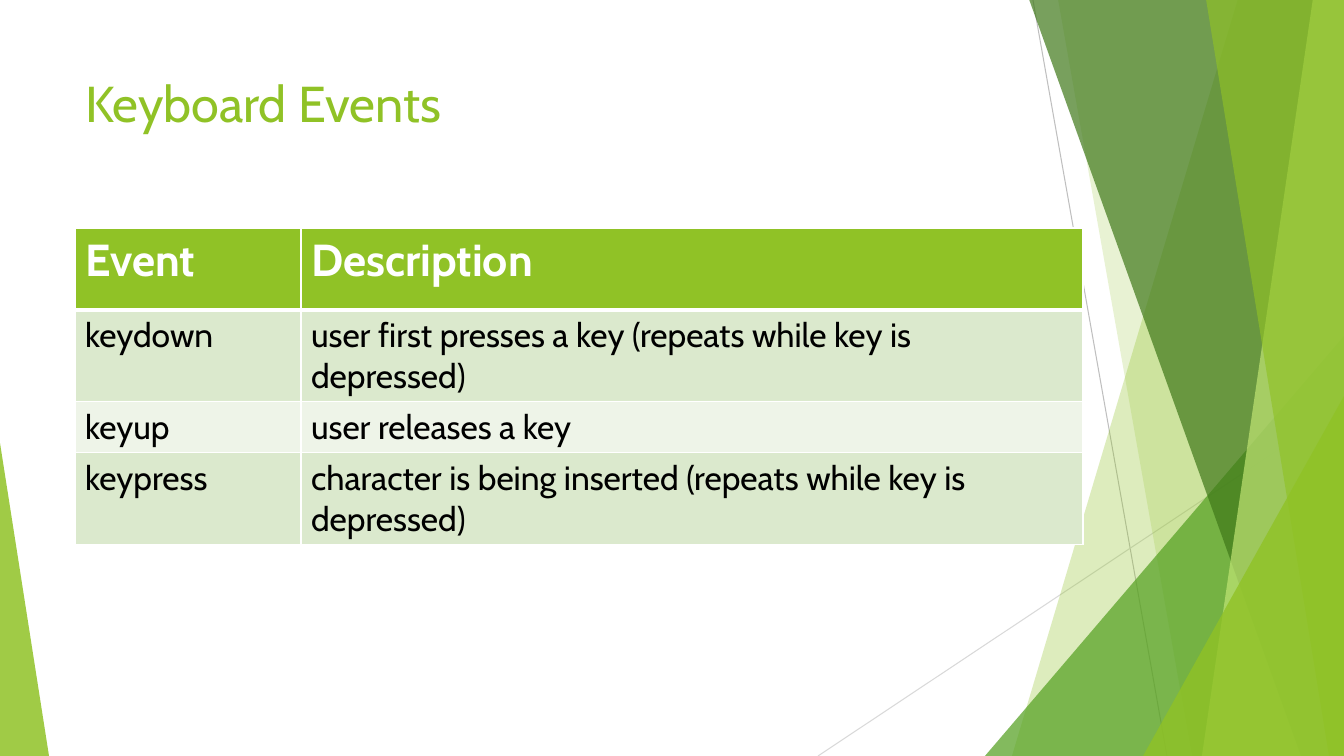
from lxml.etree import SubElement
from pptx import Presentation
from pptx.dml.color import RGBColor
from pptx.enum.shapes import MSO_CONNECTOR, MSO_SHAPE
from pptx.enum.text import MSO_ANCHOR, PP_ALIGN
from pptx.oxml.ns import qn
from pptx.util import Emu, Pt

WIDTH, HEIGHT = 1344, 756
SCALE = 12192000 / WIDTH
COLORS = {
    "lime": "90C226", "green": "54A021", "forest": "3F7819", "pale": "C0E474",
    "white": "FFFFFF", "black": "000000", "gray": "BFBFBF", "silver": "D9D9D9",
    "band_dark": "DBE9CD", "band_light": "EEF4E8",
}
LINES = [((1033, 0), (1167, 756), "gray"), ((1344, 406), (818, 756), "silver")]
BACK_PANELS = [(1238, 1012, "lime", 30), (1058, 1192, "lime", 20)]
FRONT_PANELS = [(1029, 1301, "forest", 70), (1313, 1202, "pale", 70), (1206, 1329, "lime", 65)]
RIGHT_TRIANGLE = ((985, 336, 359, 420), 1, "green", 72)
CORNER_TRIANGLES = [((1143, 396, 201, 360), 1, "lime", 80), ((0, 443, 49, 313), 0, "lime", 85)]
EVENTS = [
    ("Event", "Description"),
    ("keydown", "user first presses a key (repeats while key is depressed)"),
    ("keyup", "user releases a key"),
    ("keypress", "character is being inserted (repeats while key is depressed)"),
]


def px(value):
    return Emu(round(value * SCALE))


def rgb(name):
    return RGBColor.from_string(COLORS[name])


class SlideBuilder:
    font_name = "Cabin"

    def __init__(self, presentation):
        self.slide = presentation.slides.add_slide(presentation.slide_layouts[5])
        self.shapes = self.slide.shapes

    def add_text(self, frame, text, size, color, bold=False):
        frame.word_wrap = True
        paragraph = frame.paragraphs[0]
        paragraph.alignment = PP_ALIGN.LEFT
        run = paragraph.add_run()
        run.text = text
        style = {"name": self.font_name, "size": Pt(size), "bold": bold}
        for attribute, value in style.items():
            setattr(run.font, attribute, value)
        run.font.color.rgb = rgb(color)

    def title(self, text, left, top, width, height):
        title = self.shapes.title
        box = {"left": left, "top": top, "width": width, "height": height}
        for attribute, value in box.items():
            setattr(title, attribute, px(value))
        title.text_frame.vertical_anchor = MSO_ANCHOR.TOP
        self.add_text(title.text_frame, text, 36, "lime")

    def line(self, start, end, color):
        connector = self.shapes.add_connector(
            MSO_CONNECTOR.STRAIGHT, *map(px, start), *map(px, end))
        connector.line.color.rgb = rgb(color)
        connector.line.width = Pt(0.75)
        SubElement(connector._element.spPr, qn("a:effectLst"))

    def paint(self, shape, color, opacity):
        shape.shadow.inherit = False
        shape.line.fill.background()
        shape.fill.solid()
        shape.fill.fore_color.rgb = rgb(color)
        color_element = shape._element.spPr.find(qn("a:solidFill"))[0]
        SubElement(color_element, qn("a:alpha"), val=str(opacity * 1000))

    def panel(self, top_left, bottom_left, color, opacity):
        outline = self.shapes.build_freeform(top_left, -1, SCALE)
        outline.add_line_segments([(WIDTH, -1), (WIDTH, HEIGHT), (bottom_left, HEIGHT)])
        self.paint(outline.convert_to_shape(), color, opacity)

    def triangle(self, box, apex, color, opacity):
        shape = self.shapes.add_shape(MSO_SHAPE.ISOSCELES_TRIANGLE, *map(px, box))
        shape.adjustments[0] = apex
        self.paint(shape, color, opacity)

    def borders(self, cell, bottom_width):
        properties = cell._tc.get_or_add_tcPr()
        for side, width in {"L": 1, "R": 1, "T": 1, "B": bottom_width}.items():
            border = SubElement(properties, qn(f"a:ln{side}"), w=str(Pt(width)))
            fill = SubElement(border, qn("a:solidFill"))
            SubElement(fill, qn("a:srgbClr"), val=COLORS["white"])

    def table(self, rows, left, top, widths, heights):
        frame = self.shapes.add_table(
            len(rows), len(widths), px(left), px(top), px(sum(widths)), px(sum(heights)))
        table = frame.table
        for column, width in zip(table.columns, widths):
            column.width = px(width)
        for index, (texts, height) in enumerate(zip(rows, heights)):
            table.rows[index].height = px(height)
            header = index == 0
            band = "lime" if header else ("band_light", "band_dark")[index % 2]
            size, color = (32, "white") if header else (24, "black")
            for cell, text in zip(table.rows[index].cells, texts):
                self.borders(cell, 3 if header else 1)
                cell.fill.solid()
                cell.fill.fore_color.rgb = rgb(band)
                self.add_text(cell.text_frame, text, size, color, header)


def main():
    presentation = Presentation()
    presentation.slide_width, presentation.slide_height = px(WIDTH), px(HEIGHT)
    builder = SlideBuilder(presentation)
    for line in LINES:
        builder.line(*line)
    for panel in BACK_PANELS:
        builder.panel(*panel)
    builder.triangle(*RIGHT_TRIANGLE)
    for panel in FRONT_PANELS:
        builder.panel(*panel)
    for triangle in CORNER_TRIANGLES:
        builder.triangle(*triangle)
    builder.title("Keyboard Events", 75, 67, 948, 83)
    builder.table(EVENTS, 75, 228, (226, 782), (82, 91, 51, 91))
    presentation.save("out.pptx")


if __name__ == "__main__":
    main()
